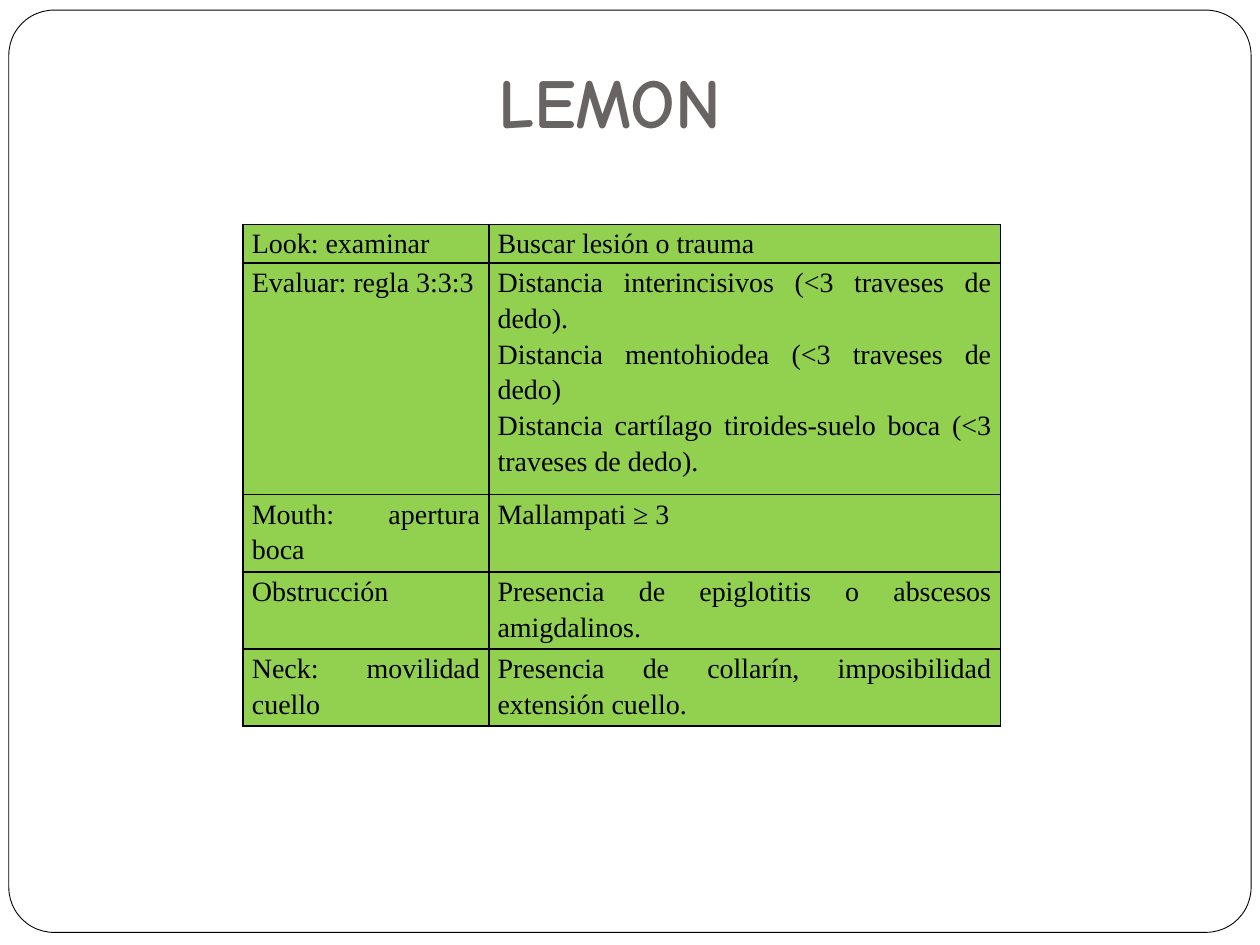
from lxml import etree
from pptx import Presentation
from pptx.dml.color import RGBColor
from pptx.enum.shapes import MSO_SHAPE
from pptx.enum.text import MSO_ANCHOR, PP_ALIGN
from pptx.oxml.ns import qn
from pptx.util import Inches, Pt

ROUNDED = MSO_SHAPE.ROUNDED_RECTANGLE
BOTTOM = MSO_ANCHOR.BOTTOM
CENTER, JUSTIFY = PP_ALIGN.CENTER, PP_ALIGN.JUSTIFY
BLACK = RGBColor(0x00, 0x00, 0x00)
WHITE = RGBColor(0xFF, 0xFF, 0xFF)
GRAY = RGBColor(0x69, 0x64, 0x64)
GREEN = RGBColor(0x92, 0xD0, 0x50)

LINE_HEIGHT = 0.28
COLUMN_WIDTHS = [1.95, 4.06]
# Each row: number of text lines, letter of the mnemonic, findings
ROWS = [
    (1, "Look: examinar", "Buscar lesión o trauma"),
    (6, "Evaluar: regla 3:3:3",
     "Distancia interincisivos (<3 traveses de dedo).\n"
     "Distancia mentohiodea (<3 traveses de dedo)\n"
     "Distancia cartílago tiroides-suelo boca (<3 traveses de dedo)."),
    (2, "Mouth: apertura boca", "Mallampati ≥ 3"),
    (2, "Obstrucción", "Presencia de epiglotitis o abscesos amigdalinos."),
    (2, "Neck: movilidad cuello",
     "Presencia de collarín, imposibilidad extensión cuello."),
]


def add_borders(cell):
    """Draw a 1 pt black line on all four sides; call before filling the cell."""
    properties = cell._tc.get_or_add_tcPr()
    for side in ("a:lnL", "a:lnR", "a:lnT", "a:lnB"):
        line = etree.SubElement(properties, qn(side), w=str(Pt(1)))
        fill = etree.SubElement(line, qn("a:solidFill"))
        etree.SubElement(fill, qn("a:srgbClr"), val=str(BLACK))


deck = Presentation()
deck.slide_width, deck.slide_height = Inches(10), Inches(7.5)
page = deck.slides.add_slide(deck.slide_layouts[6])

frame = page.shapes.add_shape(
    ROUNDED, Inches(0.07), Inches(0.08), Inches(9.86), Inches(7.32))
frame.adjustments[0] = 0.049
frame.shadow.inherit = False
frame.fill.solid()
frame.fill.fore_color.rgb = WHITE
frame.line.color.rgb = BLACK
frame.line.width = Pt(0.5)

title = page.shapes.add_textbox(
    Inches(0.59), Inches(0.36), Inches(8.5), Inches(0.87)).text_frame
title.word_wrap = True
title.vertical_anchor = BOTTOM
title.margin_bottom = Inches(0.1)
para = title.paragraphs[0]
para.text = "LEMON"
para.alignment = CENTER
para.font.name = "Comic Neue"
para.font.size = Pt(40)
para.font.bold = True
para.font.color.rgb = GRAY

line_count = sum(row[0] for row in ROWS)
table = page.shapes.add_table(
    len(ROWS), len(COLUMN_WIDTHS), Inches(1.93), Inches(1.78),
    Inches(sum(COLUMN_WIDTHS)), Inches(line_count * LINE_HEIGHT)).table
for column, width in zip(table.columns, COLUMN_WIDTHS):
    column.width = Inches(width)

for row, (lines, *texts) in zip(table.rows, ROWS):
    row.height = Inches(lines * LINE_HEIGHT)
    for cell, text in zip(row.cells, texts):
        add_borders(cell)
        cell.fill.solid()
        cell.fill.fore_color.rgb = GREEN
        cell.margin_left = cell.margin_right = Inches(0.07)
        cell.margin_top = cell.margin_bottom = 0
        cell.text = text
        for para in cell.text_frame.paragraphs:
            para.alignment = JUSTIFY
            para.line_spacing = 1.15
            para.font.name = "Times New Roman"
            para.font.size = Pt(16)
            para.font.color.rgb = BLACK

deck.save("out.pptx")
